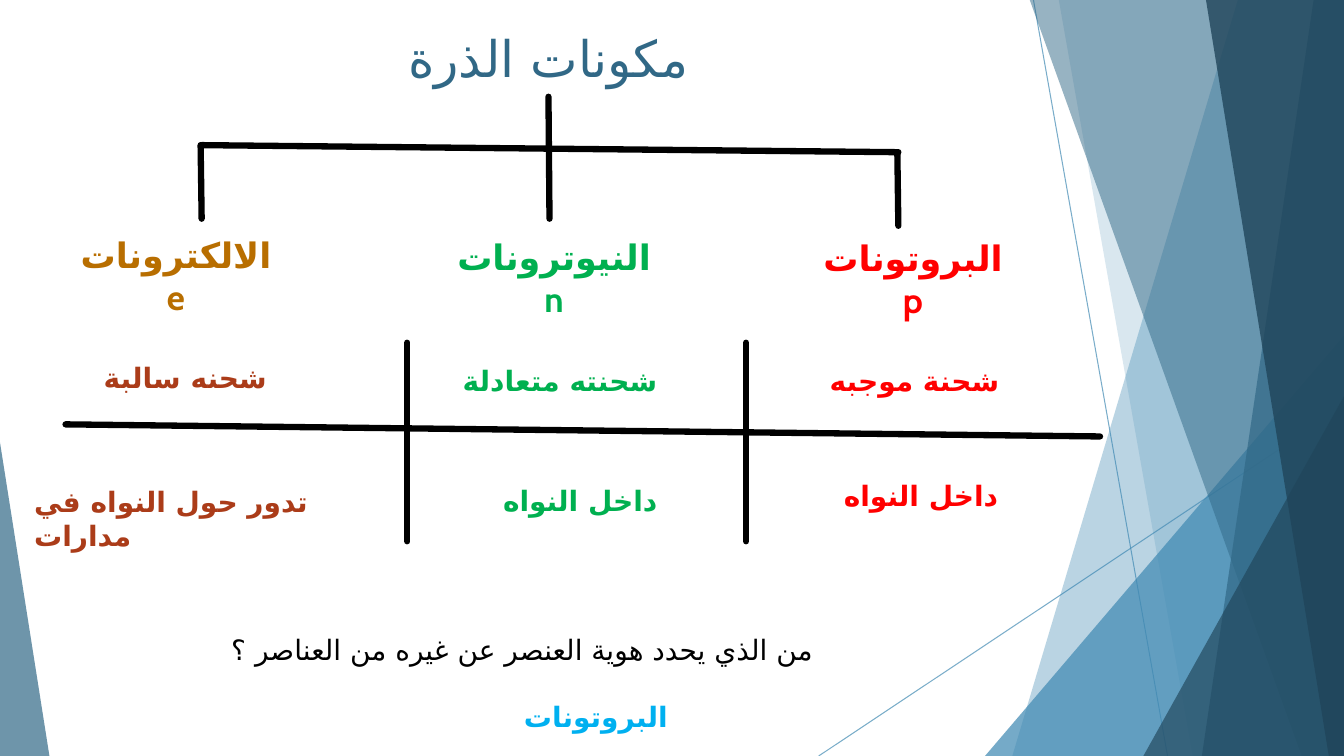
from lxml import etree
from pptx import Presentation
from pptx.dml.color import RGBColor
from pptx.enum.shapes import MSO_CONNECTOR, MSO_SHAPE
from pptx.enum.text import MSO_ANCHOR, MSO_AUTO_SIZE, PP_ALIGN
from pptx.oxml.ns import qn
from pptx.util import Inches, Pt

STRAIGHT = MSO_CONNECTOR.STRAIGHT
TRIANGLE = MSO_SHAPE.ISOSCELES_TRIANGLE
LEFT, CENTER = PP_ALIGN.LEFT, PP_ALIGN.CENTER
TOP, MIDDLE = MSO_ANCHOR.TOP, MSO_ANCHOR.MIDDLE
GROW = MSO_AUTO_SIZE.SHAPE_TO_FIT_TEXT

THEME = {
    "font": "Cabin",
    "arabic_font": "DejaVu Sans",
    "sky": "418AB3",
    "steel": "316886",
    "navy": "20455A",
    "black": "000000",
    "proton": "FF0000",
    "neutron": "00B050",
    "electron": "B86E00",
    "electron_fact": "AB3C19",
    "answer": "00B0F0",
    "title_size": 36,
    "particle_size": 25,
    "fact_size": 20,
    "branch_width": 4.5,
    "ray_width": 0.75,
}

WIDTH, HEIGHT = 13.33, 7.5

deck = Presentation()
deck.slide_width, deck.slide_height = Inches(WIDTH), Inches(HEIGHT)
slide = deck.slides.add_slide(deck.slide_layouts[6])
shapes = slide.shapes


def set_alpha(shape, percent):
    for color in shape._element.spPr.iter(qn("a:srgbClr")):
        etree.SubElement(color, qn("a:alpha")).set("val", str(percent * 1000))


def draw_line(x1, y1, x2, y2, color, width):
    line = shapes.add_connector(STRAIGHT, Inches(x1), Inches(y1), Inches(x2), Inches(y2))
    line.line.color.rgb = RGBColor.from_string(THEME[color])
    line.line.width = Pt(THEME[width])
    etree.SubElement(line._element.spPr, qn("a:effectLst"))
    return line


for ray in [(10.25, 0, 11.58, HEIGHT), (WIDTH, 4.03, 8.12, HEIGHT)]:
    set_alpha(draw_line(*ray, "sky", "ray_width"), 70)

facets = [
    ("band", (12.28, 10.04), "sky", 36),
    ("band", (10.5, 11.83), "sky", 20),
    ("triangle", (9.77, 3.33, 3.56, 1), "sky", 72),
    ("band", (10.21, 12.91), "steel", 50),
    ("band", (13.03, 11.92), "steel", 70),
    ("band", (11.96, 13.18), "navy", 80),
    ("triangle", (11.34, 3.93, 1.99, 1), "navy", 66),
    ("triangle", (0, 4.39, 0.49, 0), "steel", 70),
]
for kind, geometry, color, alpha in facets:
    if kind == "band":
        top_x, bottom_x = geometry
        outline = shapes.build_freeform(Inches(top_x), Inches(-0.01))
        corners = [(WIDTH, -0.01), (WIDTH, HEIGHT), (bottom_x, HEIGHT)]
        outline.add_line_segments([(Inches(x), Inches(y)) for x, y in corners], close=True)
        facet = outline.convert_to_shape()
    else:
        left, top, width, apex = geometry
        facet = shapes.add_shape(TRIANGLE, Inches(left), Inches(top), Inches(width), Inches(HEIGHT - top))
        facet.adjustments[0] = apex
    facet.shadow.inherit = False
    facet.fill.solid()
    facet.fill.fore_color.rgb = RGBColor.from_string(THEME[color])
    facet.line.fill.background()
    set_alpha(facet, alpha)

branches = [
    (5.44, 0.96, 5.45, 2.17),
    (8.9, 1.51, 8.91, 2.24),
    (1.99, 1.44, 2, 2.17),
    (8.91, 1.51, 2, 1.44),
    (7.4, 3.4, 7.4, 5.37),
    (4.04, 3.4, 4.04, 5.37),
    (0.65, 4.21, 10.91, 4.33),
]
for branch in branches:
    draw_line(*branch, "black", "branch_width").line._get_or_add_ln().set("cap", "rnd")

title = ("مكونات الذرة", 0.74, 0.17, 9.4, 0.79, "steel")
particles = [
    ("البروتونات p", 7.98, 2.3, 2.15, 0.52, "proton"),
    ("النيوترونات n", 4.32, 2.29, 2.35, 0.52, "neutron"),
    ("الالكترونات e", 0.57, 2.27, 2.35, 0.52, "electron"),
]
facts = [
    ("شحنة موجبه", 8.13, 3.56, 2.12, 0.44, "proton"),
    ("شحنته متعادلة", 4.49, 3.56, 2.23, 0.44, "neutron"),
    ("شحنه سالبة", 0.93, 3.53, 2.12, 0.44, "electron_fact"),
    ("داخل النواه", 8.27, 4.7, 1.78, 0.44, "proton"),
    ("داخل النواه", 4.89, 4.75, 1.78, 0.44, "neutron"),
    ("تدور حول النواه في مدارات", 0.24, 4.76, 3.86, 0.44, "electron_fact"),
]
question = ("من الذي يحدد هوية العنصر عن غيره من العناصر ؟", 1.46, 6.23, 7.44, 0.44, "black")
answer = ("البروتونات", 4.49, 6.89, 2.84, 0.44, "answer")

groups = [
    ([title], "title_size", False, CENTER, MIDDLE),
    (particles, "particle_size", True, CENTER, TOP),
    (facts, "fact_size", True, LEFT, TOP),
    ([question], "fact_size", False, CENTER, TOP),
    ([answer], "fact_size", True, CENTER, TOP),
]
for labels, size, bold, alignment, anchor in groups:
    for wording, left, top, width, height, color in labels:
        label = shapes.add_textbox(Inches(left), Inches(top), Inches(width), Inches(height))
        frame = label.text_frame
        frame.word_wrap = True
        frame.vertical_anchor = anchor
        if labels is not groups[0][0]:
            frame.auto_size = GROW
        paragraph = frame.paragraphs[0]
        paragraph.alignment = alignment
        if labels is particles:
            paragraph._p.get_or_add_pPr().set("rtl", "1")
        run = paragraph.add_run()
        run.text = wording
        run.font.name = THEME["font"]
        run.font.size = Pt(THEME[size])
        run.font.bold = bold
        run.font.color.rgb = RGBColor.from_string(THEME[color])
        etree.SubElement(run._r.get_or_add_rPr(), qn("a:cs")).set("typeface", THEME["arabic_font"])

deck.save("out.pptx")
